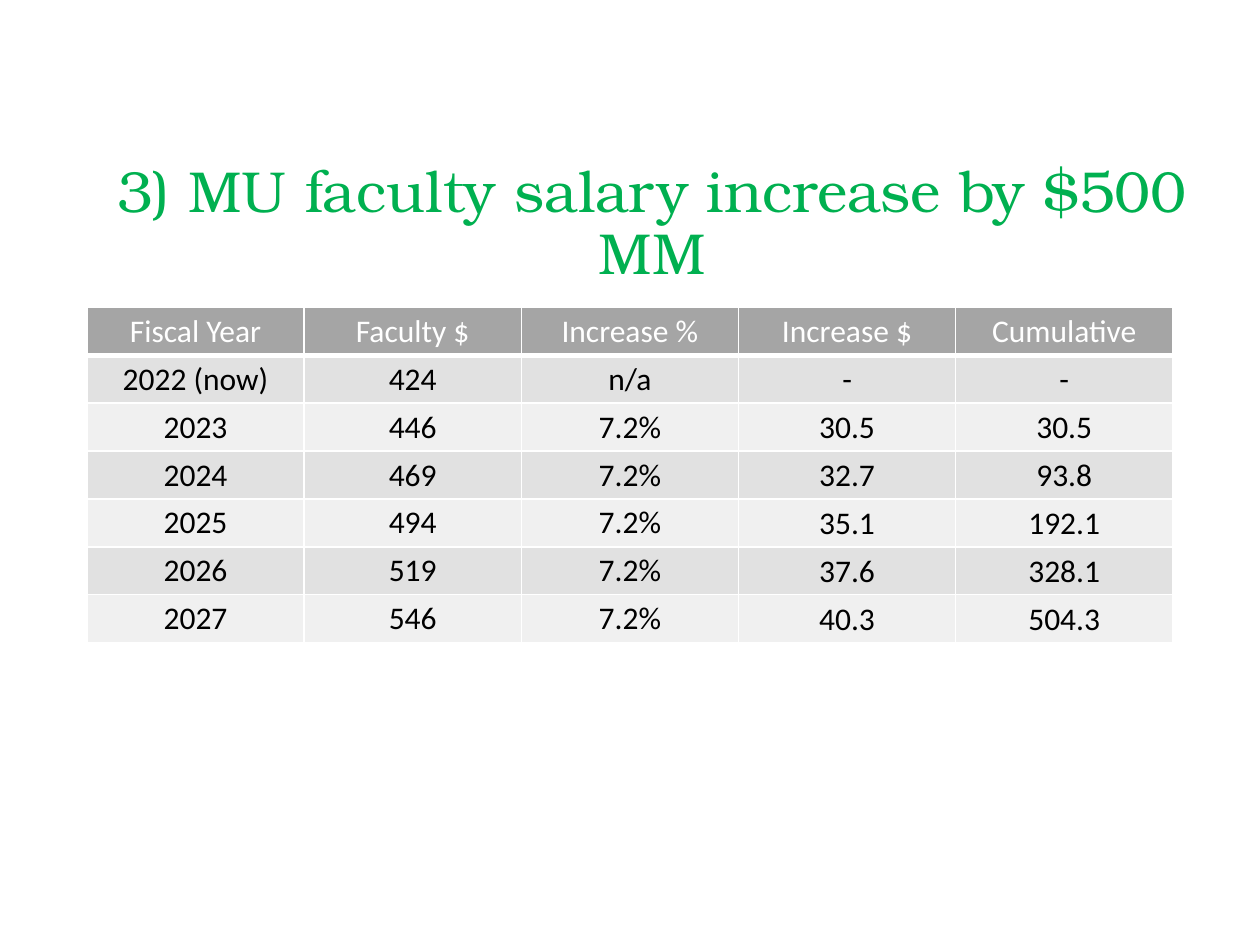
from lxml.etree import SubElement
from pptx import Presentation
from pptx.dml.color import RGBColor
from pptx.enum.text import MSO_ANCHOR, PP_ALIGN
from pptx.oxml.ns import qn
from pptx.util import Inches, Pt

WHITE = RGBColor(0xFF, 0xFF, 0xFF)
BLACK = RGBColor(0x00, 0x00, 0x00)
GREEN = RGBColor(0x00, 0xB0, 0x50)
HEADER_GRAY = RGBColor(0xA5, 0xA5, 0xA5)
BAND_GRAYS = (RGBColor(0xF0, 0xF0, 0xF0), RGBColor(0xE1, 0xE1, 0xE1))

SLIDE_WIDTH, SLIDE_HEIGHT = Inches(10), Inches(7.5)
LEFT = Inches(0.69)
COLUMN_WIDTH = Inches(8.62 / 5)
ROW_HEIGHT = Inches(2.66 / 7)

TITLE = "3) MU faculty salary increase by $500 MM"
SALARY_ROWS = [
    ("Fiscal Year", "Faculty $", "Increase %", "Increase $", "Cumulative"),
    ("2022 (now)", "424", "n/a", "-", "-"),
    ("2023", "446", "7.2%", "30.5", "30.5"),
    ("2024", "469", "7.2%", "32.7", "93.8"),
    ("2025", "494", "7.2%", "35.1", "192.1"),
    ("2026", "519", "7.2%", "37.6", "328.1"),
    ("2027", "546", "7.2%", "40.3", "504.3"),
]


def add_centered_run(text_frame, text, font_name, size, color):
    paragraph = text_frame.paragraphs[0]
    paragraph.alignment = PP_ALIGN.CENTER
    run = paragraph.add_run()
    run.text = text
    run.font.name = font_name
    run.font.size = Pt(size)
    run.font.bold = False
    run.font.color.rgb = color
    return paragraph


def add_title(slide):
    text_box = slide.shapes.add_textbox(LEFT, Inches(1.24), Inches(8.97), Inches(1.09))
    text_frame = text_box.text_frame
    text_frame.word_wrap = True
    text_frame.vertical_anchor = MSO_ANCHOR.MIDDLE
    paragraph = add_centered_run(text_frame, TITLE, "TeX Gyre Bonum", 33, GREEN)
    paragraph.line_spacing = 0.9


def set_borders(cell, bottom_width):
    """Draw white cell borders, 1 point wide except at the bottom."""
    properties = cell._tc.get_or_add_tcPr()
    for side, width in (("L", 1), ("R", 1), ("T", 1), ("B", bottom_width)):
        line = SubElement(properties, qn(f"a:ln{side}"), w=str(Pt(width)))
        fill = SubElement(line, qn("a:solidFill"))
        SubElement(fill, qn("a:srgbClr"), val=str(WHITE))


def style_cell(cell, row, column):
    is_header = row == 0
    set_borders(cell, 3 if is_header else 1)
    cell.fill.solid()
    cell.fill.fore_color.rgb = HEADER_GRAY if is_header else BAND_GRAYS[row % 2]
    is_calculated = row >= 2 and column >= 3
    if is_calculated:
        cell.vertical_anchor = MSO_ANCHOR.MIDDLE
    side_margin = Inches(0.01 if is_calculated else 0.07)
    cell.margin_left = cell.margin_right = side_margin
    cell.margin_top = Inches(0.01 if is_calculated else 0.04)
    cell.margin_bottom = Inches(0 if is_calculated else 0.04)


def add_salary_table(slide):
    row_count, column_count = len(SALARY_ROWS), len(SALARY_ROWS[0])
    table = slide.shapes.add_table(
        row_count, column_count, LEFT, Inches(2.44),
        COLUMN_WIDTH * column_count, ROW_HEIGHT * row_count,
    ).table
    for row, values in enumerate(SALARY_ROWS):
        for column, value in enumerate(values):
            cell = table.cell(row, column)
            style_cell(cell, row, column)
            color = WHITE if row == 0 else BLACK
            add_centered_run(cell.text_frame, value, "Calibri", 18, color)


def main():
    presentation = Presentation()
    presentation.slide_width = SLIDE_WIDTH
    presentation.slide_height = SLIDE_HEIGHT
    slide = presentation.slides.add_slide(presentation.slide_layouts[6])
    add_title(slide)
    add_salary_table(slide)
    presentation.save("out.pptx")


if __name__ == "__main__":
    main()
